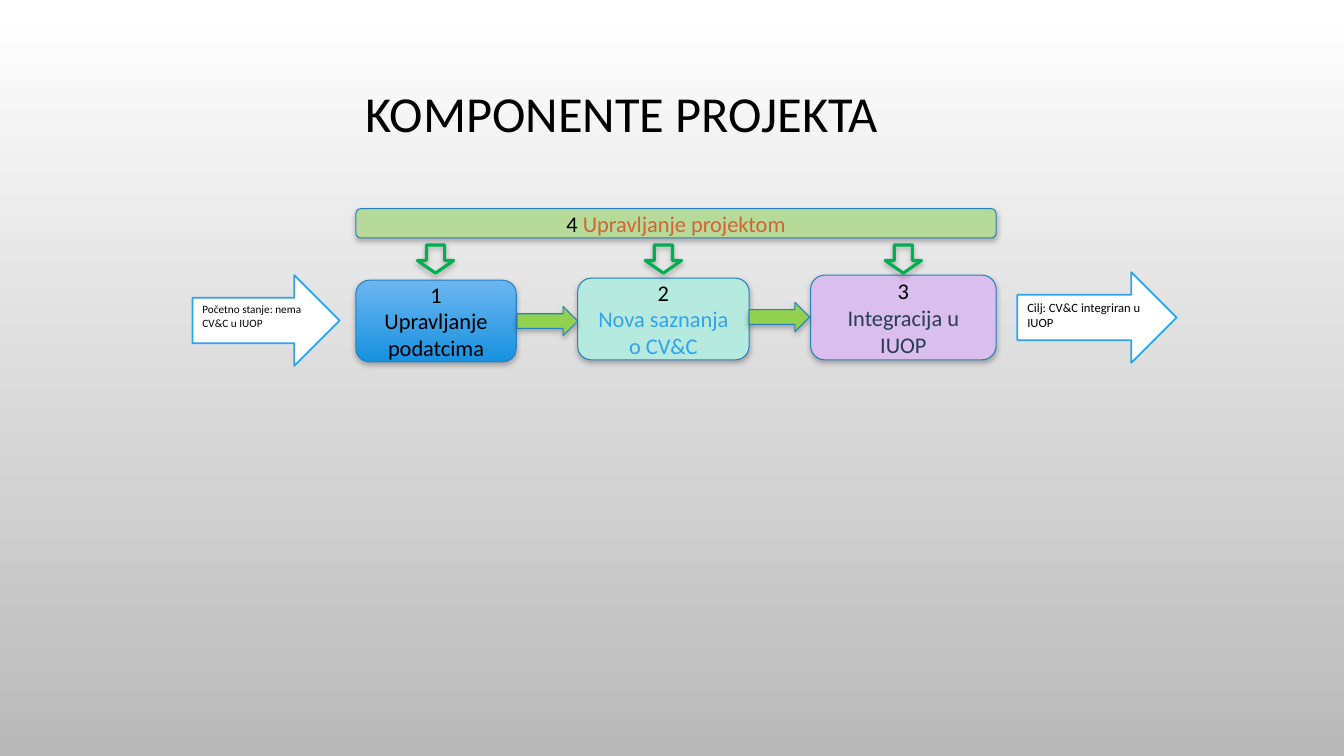
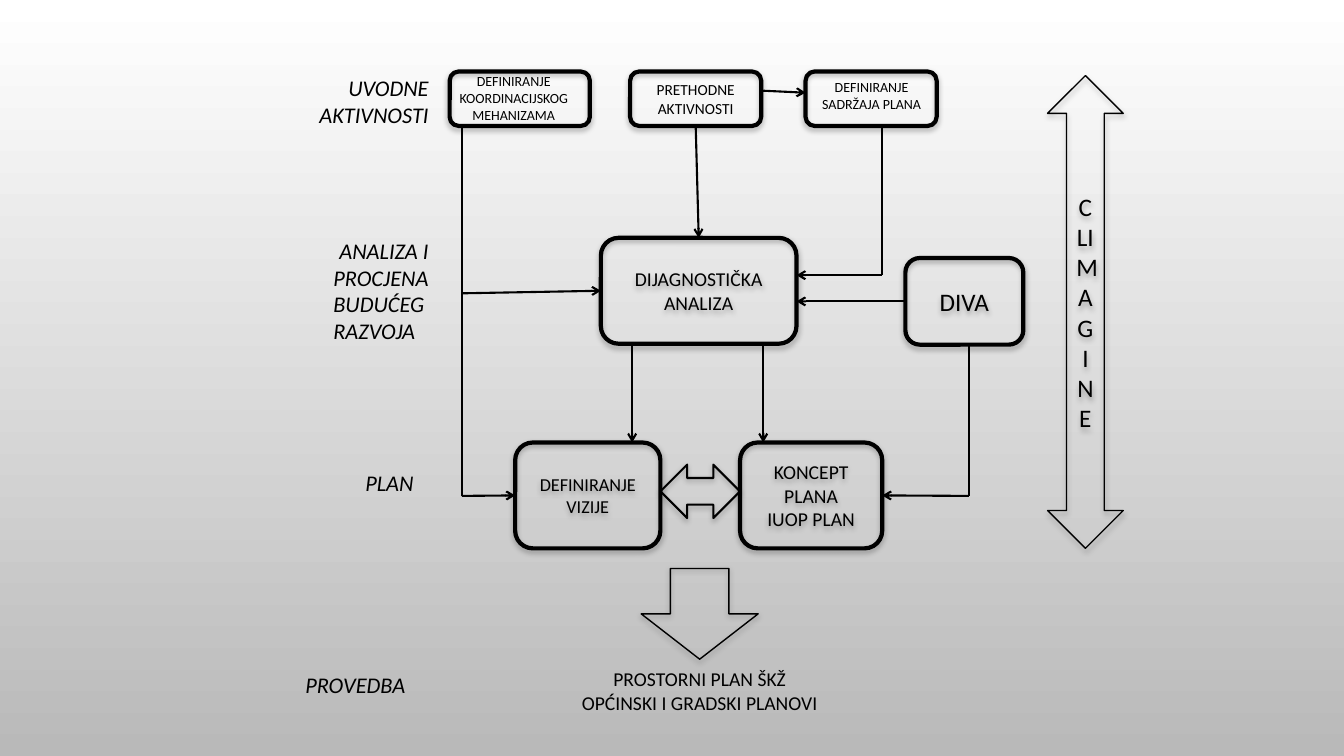
from pptx import Presentation
from pptx.dml.color import RGBColor
from pptx.enum.shapes import MSO_CONNECTOR, MSO_SHAPE as SHAPE
from pptx.enum.text import MSO_ANCHOR as ANCHOR, MSO_AUTO_SIZE as AUTOSIZE, PP_ALIGN as ALIGN
from pptx.oxml import parse_xml
from pptx.oxml.ns import nsdecls
from pptx.util import Pt

# Shared style; 100 px make one inch
PX = 9144
FONT = "Calibri"
BLACK = RGBColor(0x00, 0x00, 0x00)
WHITE = RGBColor(0xFF, 0xFF, 0xFF)
GREY = RGBColor(0xB9, 0xB9, 0xB9)
SKY = RGBColor(0x2F, 0xA3, 0xEE)
SKY_LIGHT = RGBColor(0x6C, 0xB6, 0xF1)
SKY_DARK = RGBColor(0x18, 0x91, 0xDF)
OUTLINE = RGBColor(0x26, 0x83, 0xBF)
MINT = RGBColor(0xB7, 0xEA, 0xDE)
LILAC = RGBColor(0xDA, 0xBE, 0xED)
NAVY = RGBColor(0x28, 0x3C, 0x55)
PALE_GREEN = RGBColor(0xB6, 0xDA, 0x9A)
LIME = RGBColor(0x92, 0xD0, 0x50)
GREEN = RGBColor(0x00, 0xB0, 0x50)
RUST = RGBColor(0xCE, 0x66, 0x33)
TOP, LEFT, BOTTOM, RIGHT = range(4)

# Slide 1: a line is a string or a list of (text, colour) spans
TITLE = ("KOMPONENTE PROJEKTA", (353, 76, 777, 71))
COMPONENTS = [  # place, fill, lines
    ((353, 207, 635, 29), PALE_GREEN, [[("4 ", BLACK), ("Upravljanje projektom", RUST)]]),
    ((353, 278, 159, 81), (SKY_LIGHT, SKY_DARK), ["1", "Upravljanje podatcima"]),
    ((573, 276, 170, 81), MINT, ["2", [("Nova saznanja o CV&C", SKY)]]),
    ((804, 273, 184, 84), LILAC, ["3", [("Integracija u IUOP", NAVY)]]),
]
STATES = [  # place, text size, text
    ((191, 273, 146, 90), 8, "Početno stanje: nema CV&C u IUOP"),
    ((1009, 270, 158, 90), 9, "Cilj: CV&C integriran u IUOP"),
]
STEP_ARROWS = [(513, 304), (743, 300)]
STEP_SIZE = (60, 29)
DROP_SIZE = (36, 28)
DROP_TOP = 243

# Slide 2
BOXES = {  # name: place, text size, lines
    "mechanism": ((446, 71, 139, 54), 10, []),
    "prior": ((625, 71, 130, 54), 11, []),
    "contents": ((799, 71, 130, 54), 10, []),
    "diva": ((898, 256, 117, 86), 18, ["DIVA"]),
    "analysis": ((596, 236, 194, 105), 14, ["DIJAGNOSTIČKA ANALIZA"]),
    "vision": ((511, 439, 144, 105), 13, ["DEFINIRANJE VIZIJE"]),
    "concept": ((734, 439, 141, 105), 14, ["KONCEPT PLANA", "IUOP PLAN"]),
}
CAPTIONS = [  # place, text size, lines
    ((440, 67, 139, 61), 10, ["DEFINIRANJE", "KOORDINACIJSKOG", "MEHANIZAMA"]),
    ((639, 75, 102, 47), 11, ["PRETHODNE", "AKTIVNOSTI"]),
    ((803, 73, 123, 44), 10, ["DEFINIRANJE", "SADRŽAJA PLANA"]),
    ((560, 657, 268, 57), 14, ["PROSTORNI PLAN ŠKŽ", "OPĆINSKI I GRADSKI PLANOVI"]),
]
PHASES = [  # place, lines, alignment per line, wrap
    ((271, 69, 164, 64), ["UVODNE AKTIVNOSTI"], [ALIGN.RIGHT], True),
    ((296, 230, 139, 118), ["ANALIZA I", "PROCJENA", "BUDUĆEG", "RAZVOJA"],
     [ALIGN.RIGHT] + [ALIGN.LEFT] * 3, False),
    ((352, 461, 68, 37), ["PLAN"], [ALIGN.RIGHT], False),
    ((293, 661, 120, 37), ["PROVEDBA"], [ALIGN.LEFT], False),
]
BLOCK_ARROWS = [  # kind, place, line width, lines
    (SHAPE.DOWN_ARROW, (636, 564, 116, 90), 1, []),
    (SHAPE.LEFT_RIGHT_ARROW, (655, 461, 79, 53), 1.5, []),
    (SHAPE.UP_DOWN_ARROW, (1039, 75, 75, 469), 1, ["CLIMAGINE"]),
]
LINKS = [  # from, to, arrowhead; an end is a point or a (box, side) pair
    (("prior", BOTTOM), ("analysis", TOP), True),
    ((627, 342), (627, 439), True),
    ((757, 342), (757, 439), True),
    ((458, 125), (458, 492), False),
    ((458, 291), ("analysis", LEFT), True),
    ((458, 492), ("vision", LEFT), True),
    ((757, 90), (799, 92), True),
    ((875, 125), (875, 273), False),
    ((875, 273), (790, 273), True),
    (("diva", LEFT), (790, 299), True),
    ((961, 342), (961, 492), False),
    ((961, 492), ("concept", RIGHT), True),
]


def emu(lengths):
    return [length * PX for length in lengths]


def paint(fill, colour):
    """Apply no fill, one colour, or a top-to-bottom gradient of two colours."""
    if colour is None:
        fill.background()
    elif isinstance(colour, RGBColor):
        fill.solid()
        fill.fore_color.rgb = colour
    else:
        fill.gradient()
        fill.gradient_angle = 270
        for stop, stop_colour in zip(fill.gradient_stops, colour):
            stop.color.rgb = stop_colour


def write(frame, lines, size, aligns, anchor=ANCHOR.TOP, italic=False):
    frame.vertical_anchor = anchor
    for index, line in enumerate(lines):
        para = frame.add_paragraph() if index else frame.paragraphs[0]
        para.alignment = aligns[index]
        for text, colour in [(line, BLACK)] if isinstance(line, str) else line:
            span = para.add_run()
            span.text = text
            span.font.name = FONT
            span.font.size = Pt(size)
            span.font.italic = italic
            span.font.color.rgb = colour


def add_shape(page, kind, place, fill, line, width, shadow=True):
    shape = page.shapes.add_shape(kind, *emu(place))
    paint(shape.fill, fill)
    shape.line.color.rgb = line
    shape.line.width = Pt(width)
    shape.shadow.inherit = False
    if shadow:
        effects = shape._element.spPr.find(
            "{http://schemas.openxmlformats.org/drawingml/2006/main}effectLst")
        effects.append(parse_xml(
            f'<a:outerShdw {nsdecls("a")} blurRad="{Pt(4)}" dist="{Pt(2)}" dir="5400000" '
            'rotWithShape="0"><a:srgbClr val="000000"><a:alpha val="28000"/></a:srgbClr>'
            '</a:outerShdw>'))
    return shape


def add_centred(page, kind, place, fill, line, width, lines, size):
    shape = add_shape(page, kind, place, fill, line, width)
    write(shape.text_frame, lines, size, [ALIGN.CENTER] * len(lines), ANCHOR.MIDDLE)
    return shape


def add_text(page, place, lines, size, aligns, wrap=False, italic=False):
    frame = page.shapes.add_textbox(*emu(place)).text_frame
    frame.word_wrap = wrap
    frame.auto_size = AUTOSIZE.SHAPE_TO_FIT_TEXT
    write(frame, lines, size, aligns, italic=italic)


def add_link(page, boxes, start, end, arrow):
    points = [(0, 0) if isinstance(stop[0], str) else stop for stop in (start, end)]
    link = page.shapes.add_connector(MSO_CONNECTOR.STRAIGHT, *emu(points[0] + points[1]))
    for stop, connect in ((start, link.begin_connect), (end, link.end_connect)):
        if isinstance(stop[0], str):
            connect(boxes[stop[0]], stop[1])
    link.line.color.rgb = BLACK
    link.line.width = Pt(1.5)
    if arrow:
        link.line._get_or_add_ln().append(
            parse_xml(f'<a:tailEnd {nsdecls("a")} type="arrow"/>'))
    link._element.spPr.append(parse_xml(f'<a:effectLst {nsdecls("a")}/>'))


def build_components(deck):
    page = deck.slides.add_slide(deck.slide_layouts[5])
    text, place = TITLE
    title = page.shapes.title
    title.left, title.top, title.width, title.height = emu(place)
    title.text_frame.auto_size = AUTOSIZE.NONE
    write(title.text_frame, [text], 36, [ALIGN.LEFT])

    for place, fill, lines in COMPONENTS:
        add_centred(page, SHAPE.ROUNDED_RECTANGLE, place, fill, OUTLINE, 0.75, lines, 16)
    for place, size, text in STATES:
        arrow = add_shape(page, SHAPE.RIGHT_ARROW, place, WHITE, SKY, 1.25, shadow=False)
        write(arrow.text_frame, [text], size, [ALIGN.LEFT])
    for corner in STEP_ARROWS:
        add_shape(page, SHAPE.RIGHT_ARROW, corner + STEP_SIZE, LIME, OUTLINE, 0.75)

    # One drop arrow centred above each numbered component
    for (left, _, width, _), _, _ in COMPONENTS[1:]:
        corner = (left + (width - DROP_SIZE[0]) // 2, DROP_TOP)
        drop = add_shape(page, SHAPE.DOWN_ARROW, corner + DROP_SIZE, None, GREEN, 2.25)
        drop.adjustments[1] = 0.45


def build_process(deck):
    page = deck.slides.add_slide(deck.slide_layouts[6])
    boxes = {
        name: add_centred(page, SHAPE.ROUNDED_RECTANGLE, place, None, BLACK, 3, lines, size)
        for name, (place, size, lines) in BOXES.items()
    }
    for place, lines, aligns, wrap in PHASES:
        add_text(page, place, lines, 16, aligns, wrap, italic=True)
    for place, size, lines in CAPTIONS:
        add_text(page, place, lines, size, [ALIGN.CENTER] * len(lines))
    for kind, place, width, lines in BLOCK_ARROWS:
        add_centred(page, kind, place, None, BLACK, width, lines, 18)
    for start, end, arrow in LINKS:
        add_link(page, boxes, start, end, arrow)


def main():
    deck = Presentation()
    deck.slide_width, deck.slide_height = emu((1333, 750))
    paint(deck.slide_master.background.fill, (WHITE, GREY))
    build_components(deck)
    build_process(deck)
    deck.save("out.pptx")


if __name__ == "__main__":
    main()
